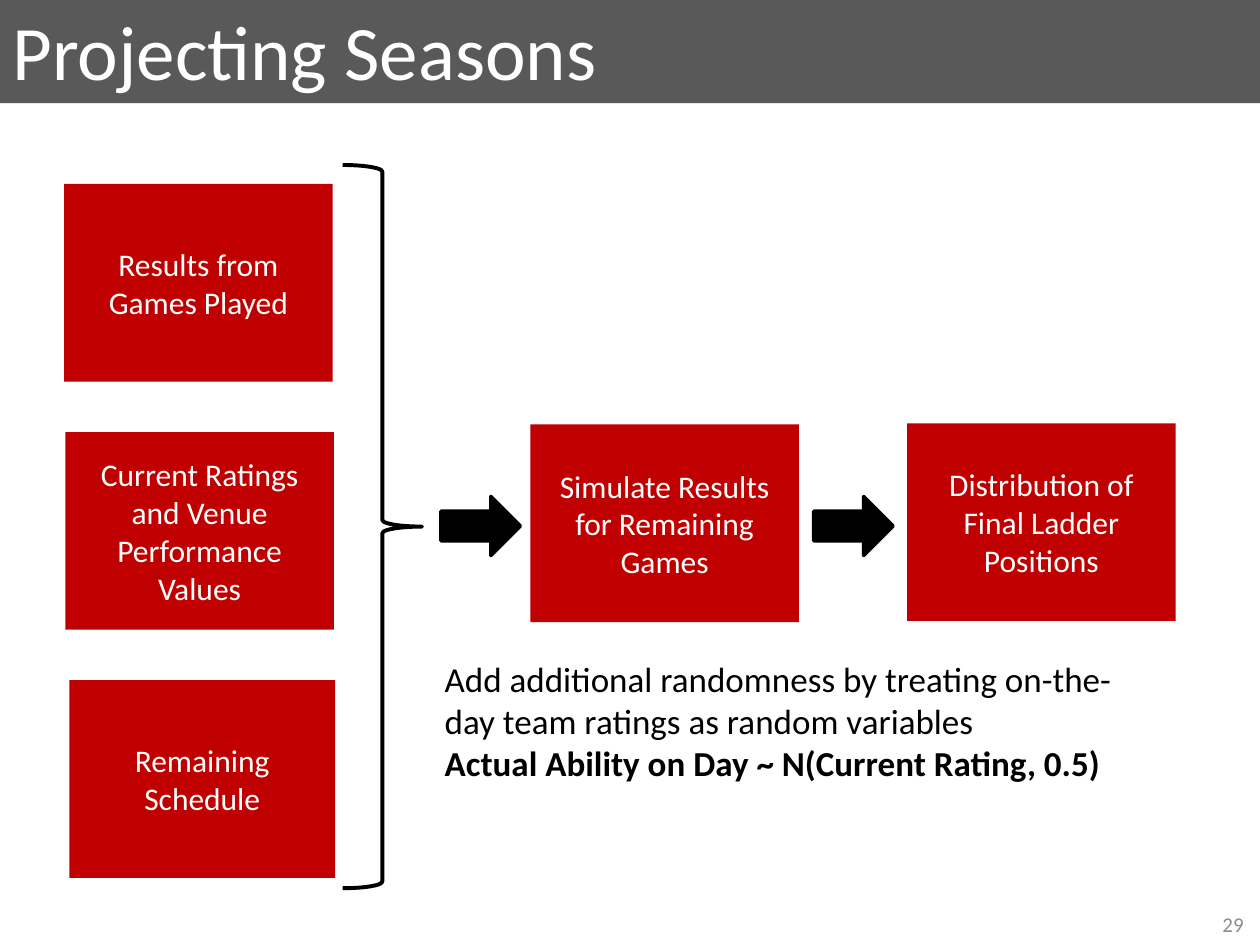
from pptx import Presentation
from pptx.dml.color import RGBColor
from pptx.enum.shapes import MSO_SHAPE
from pptx.enum.text import MSO_ANCHOR, MSO_AUTO_SIZE, PP_ALIGN
from pptx.util import Pt

FONT = "Calibri"
BLACK, WHITE, RED, DARK_GREY, GREY = "000000", "FFFFFF", "C00000", "595959", "8C8C8C"
BOX_WIDTH, BOX_HEIGHT = 153.4, 113
INPUT_TOP, INPUT_PITCH = 105.1, 141.8

INPUTS = [
    ("Results from Games Played", 36.7, BOX_WIDTH),
    ("Current Ratings and Venue Performance Values", 37.4, BOX_WIDTH),
    ("Remaining Schedule", 39.6, 152),
]
STEPS = [
    ("Simulate Results for Remaining Games", 303.1, 242.6),
    ("Distribution of Final Ladder Positions", 518.4, 241.9),
]
ARROW_LEFTS = [252, 465]


def color(value):
    return RGBColor.from_string(value)


def points(*lengths):
    return [Pt(length) for length in lengths]


def write(shape, lines, size, text_color, align=PP_ALIGN.LEFT, anchor=MSO_ANCHOR.MIDDLE):
    """Fill a shape with (text, bold) lines, one paragraph each."""
    frame = shape.text_frame
    frame_format = {"word_wrap": True, "auto_size": MSO_AUTO_SIZE.NONE, "vertical_anchor": anchor}
    for name, value in frame_format.items():
        setattr(frame, name, value)
    font_format = {"name": FONT, "size": Pt(size)}
    for index, (text, bold) in enumerate(lines):
        paragraph = frame.paragraphs[0] if index == 0 else frame.add_paragraph()
        paragraph.alignment = align
        run = paragraph.add_run()
        run.text = text
        for name, value in {**font_format, "bold": bold}.items():
            setattr(run.font, name, value)
        run.font.color.rgb = color(text_color)


def add_title(slide, text):
    title = slide.shapes.title
    position = {"left": 0, "top": -2.2, "width": 720, "height": 61.2}
    for name, value in position.items():
        setattr(title, name, Pt(value))
    title.fill.solid()
    title.fill.fore_color.rgb = color(DARK_GREY)
    write(title, [(text, False)], 44, WHITE)


def add_shape(slide, kind, bounds, fill=None, line_width=None):
    shape = slide.shapes.add_shape(kind, *points(*bounds))
    shape.shadow.inherit = False
    if fill:
        shape.fill.solid()
        shape.fill.fore_color.rgb = color(fill)
    else:
        shape.fill.background()
    if line_width:
        shape.line.color.rgb = color(BLACK)
        shape.line.width = Pt(line_width)
    else:
        shape.line.fill.background()
    return shape


def add_box(slide, text, left, top, width=BOX_WIDTH):
    box = add_shape(slide, MSO_SHAPE.RECTANGLE, (left, top, width, BOX_HEIGHT), RED)
    write(box, [(text, False)], 18, WHITE, PP_ALIGN.CENTER)


def add_text(slide, bounds, lines, size, text_color, **layout):
    write(slide.shapes.add_textbox(*points(*bounds)), lines, size, text_color, **layout)


def main():
    presentation = Presentation()
    presentation.slide_width, presentation.slide_height = points(720, 540)
    slide = presentation.slides.add_slide(presentation.slide_layouts[5])

    add_title(slide, "Projecting Seasons")
    add_text(slide, (550, 513.4, 167.8, 28.8), [("29", False)], 12, GREY, align=PP_ALIGN.RIGHT)
    for row, (text, left, width) in enumerate(INPUTS):
        add_box(slide, text, left, INPUT_TOP + row * INPUT_PITCH, width)
    for text, left, top in STEPS:
        add_box(slide, text, left, top)
    add_shape(slide, MSO_SHAPE.RIGHT_BRACE, (195.8, 94.3, 45.4, 413.3), line_width=2.25)
    for left in ARROW_LEFTS:
        add_shape(slide, MSO_SHAPE.RIGHT_ARROW, (left, 283.7, 45.4, 33.8), BLACK, 2)
    note = [
        ("Add additional randomness by treating on-the-day team ratings as random variables", False),
        ("Actual Ability on Day ~ N(Current Rating, 0.5)", True),
    ]
    add_text(slide, (247, 372.2, 396.7, 80), note, 20, BLACK, anchor=MSO_ANCHOR.TOP)

    presentation.save("out.pptx")


if __name__ == "__main__":
    main()
